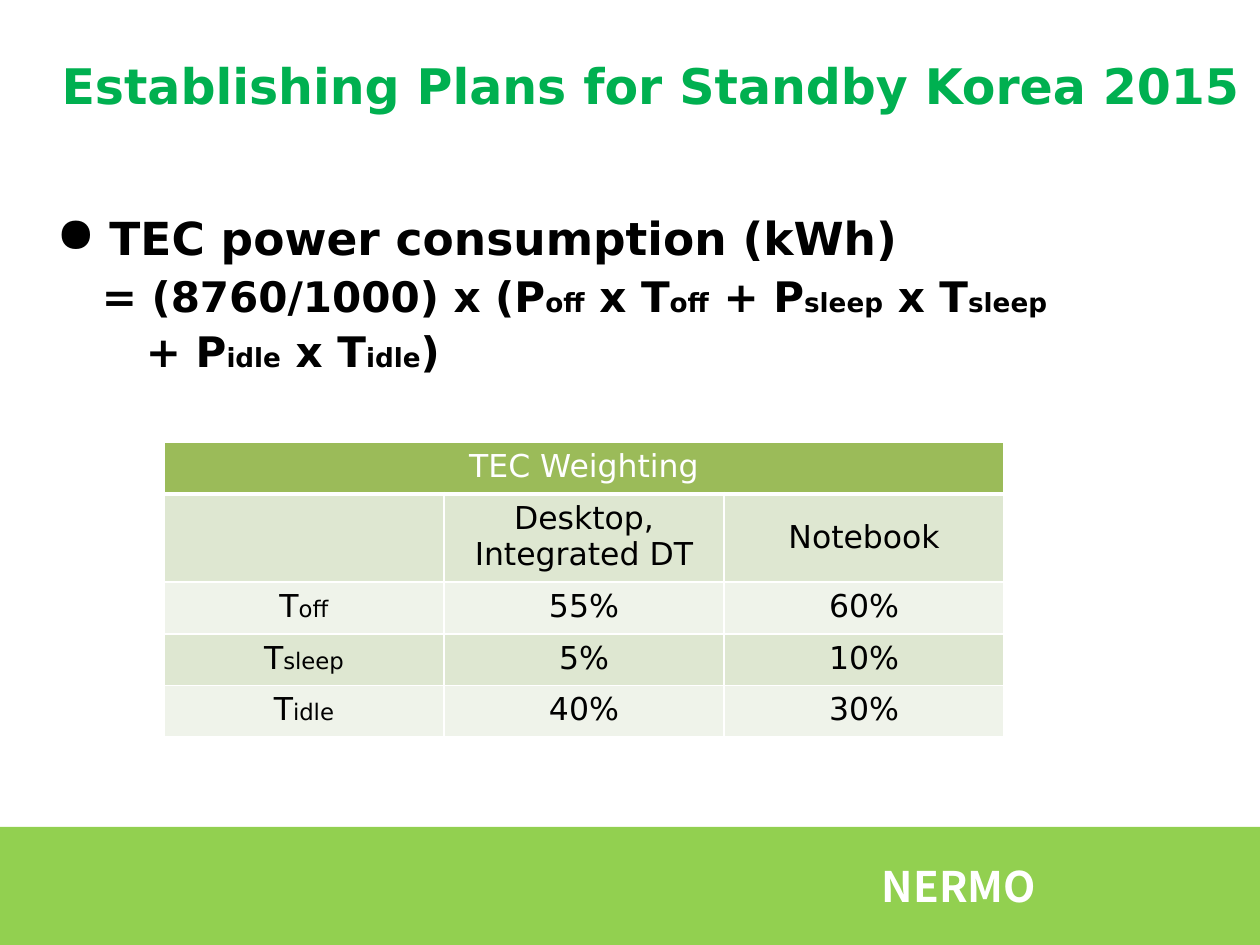
from dataclasses import dataclass

from lxml import etree
from pptx import Presentation
from pptx import util as u
from pptx.dml.color import RGBColor
from pptx.enum import shapes, text
from pptx.oxml.ns import qn

WIDTH, HEIGHT = u.Inches(10), u.Inches(7.5)


@dataclass(frozen=True)
class Theme:
    font: str = "DejaVu Sans"
    footer_font: str = "Noto Sans CJK KR"
    green: str = "00B050"
    band: str = "92D050"
    header: str = "9BBB59"
    row_dark: str = "DEE7D1"
    row_light: str = "EFF3EA"
    white: str = "FFFFFF"
    black: str = "000000"
    title: int = 28
    lead: int = 26
    formula: int = 24
    formula_sub: int = 15
    cell: int = 18
    cell_sub: int = 13


THEME = Theme()
TABLE_ROWS = [
    ["TEC Weighting", "", ""],
    ["", "Desktop, Integrated DT", "Notebook"],
    ["T|off", "55%", "60%"],
    ["T|sleep", "5%", "10%"],
    ["T|idle", "40%", "30%"],
]


def place(left, top, width, height):
    """Turn percentages of the slide into lengths."""
    return [int(share * side / 100) for share, side in
            zip((left, top, width, height), (WIDTH, HEIGHT) * 2)]


def add_run(paragraph, words, size, color, bold=False, font=THEME.font):
    run = paragraph.add_run()
    run.text = words
    run.font.name = font
    run.font.size = u.Pt(size)
    run.font.bold = bold
    run.font.color.rgb = RGBColor.from_string(color)


def add_marked_runs(paragraph, words, size, sub_size, color, bold=False):
    """Every second part between bars is set small."""
    for index, part in enumerate(words.split("|")):
        if part:
            add_run(paragraph, part, sub_size if index % 2 else size, color, bold)


def set_indent(paragraph, margin, first_line, bullet=None):
    properties = paragraph._p.get_or_add_pPr()
    properties.set("marL", str(u.Inches(margin)))
    properties.set("indent", str(u.Inches(first_line)))
    if bullet:
        etree.SubElement(properties, qn("a:buSzPct"), val="108000")
        etree.SubElement(properties, qn("a:buChar"), char=bullet)


def add_title(slide, words):
    frame = slide.shapes.add_textbox(*place(3.9, 5.2, 96.1, 7.6)).text_frame
    frame.word_wrap = False
    add_run(frame.paragraphs[0], words, THEME.title, THEME.green, bold=True)


def add_formula(slide, lead, lines):
    frame = slide.shapes.add_textbox(*place(3.5, 21.6, 93.7, 20.9)).text_frame
    frame.word_wrap = True
    paragraph = frame.paragraphs[0]
    paragraph.space_before = u.Pt(4)
    set_indent(paragraph, 0.42, -0.42, "●")
    add_run(paragraph, lead, THEME.lead, THEME.black, bold=True)
    for words, first_line in lines:
        paragraph = frame.add_paragraph()
        paragraph.space_before = u.Pt(3)
        set_indent(paragraph, 0.66, first_line)
        add_marked_runs(paragraph, words, THEME.formula, THEME.formula_sub,
                        THEME.black, bold=True)


def set_borders(cell, widths):
    properties = cell._tc.get_or_add_tcPr()
    for position, (side, width) in enumerate(widths.items()):
        line = etree.Element(qn(f"a:ln{side}"), w=str(u.Pt(width)))
        fill = etree.SubElement(line, qn("a:solidFill"))
        etree.SubElement(fill, qn("a:srgbClr"), val=THEME.white)
        properties.insert(position, line)


def fill_cell(cell, words, row):
    is_header = row == 0
    fills = THEME.row_light, THEME.row_dark
    cell.fill.solid()
    cell.fill.fore_color.rgb = RGBColor.from_string(
        THEME.header if is_header else fills[row % 2])
    set_borders(cell, {"L": 1, "R": 1, "T": 3 if row == 1 else 1,
                       "B": 3 if is_header else 1})
    if words == "Notebook":
        cell.vertical_anchor = text.MSO_ANCHOR.MIDDLE
    paragraph = cell.text_frame.paragraphs[0]
    paragraph.alignment = text.PP_ALIGN.CENTER
    add_marked_runs(paragraph, words, THEME.cell, THEME.cell_sub,
                    THEME.white if is_header else THEME.black)


def add_weighting_table(slide, rows):
    box = place(13, 46.8, 66.7, 30.9)
    table = slide.shapes.add_table(len(rows), len(rows[0]), *box).table
    for row, values in enumerate(rows):
        table.rows[row].height = u.Inches(0.68 if row == 1 else 0.41)
        for column, words in enumerate(values):
            fill_cell(table.cell(row, column), words, row)
    table.cell(0, 0).merge(table.cell(0, len(rows[0]) - 1))


def add_footer(slide, name):
    band = slide.shapes.add_shape(shapes.MSO_SHAPE.RECTANGLE,
                                  *place(0, 87.5, 100, 12.5))
    band.shadow.inherit = False
    band.fill.solid()
    band.fill.fore_color.rgb = RGBColor.from_string(THEME.band)
    band.line.fill.background()
    frame = band.text_frame
    frame.margin_left = int(WIDTH * 0.7)
    frame.vertical_anchor = text.MSO_ANCHOR.MIDDLE
    paragraph = frame.paragraphs[0]
    paragraph.alignment = text.PP_ALIGN.LEFT
    add_run(paragraph, name, THEME.formula, THEME.white, True, THEME.footer_font)


def main():
    presentation = Presentation()
    presentation.slide_width, presentation.slide_height = WIDTH, HEIGHT
    slide = presentation.slides.add_slide(presentation.slide_layouts[6])

    # Footer band with the organisation's name
    add_footer(slide, "NERMO")

    # Formula, with its second line set further in
    add_formula(slide, "TEC power consumption (kWh)", [
        ("= (8760/1000) x (P|off| x T|off| + P|sleep| x T|sleep", -0.3),
        ("+ P|idle| x T|idle|)", 0.05),
    ])

    # Weighting table and title
    add_weighting_table(slide, TABLE_ROWS)
    add_title(slide, "Establishing Plans for Standby Korea 2015")
    presentation.save("out.pptx")


if __name__ == "__main__":
    main()
